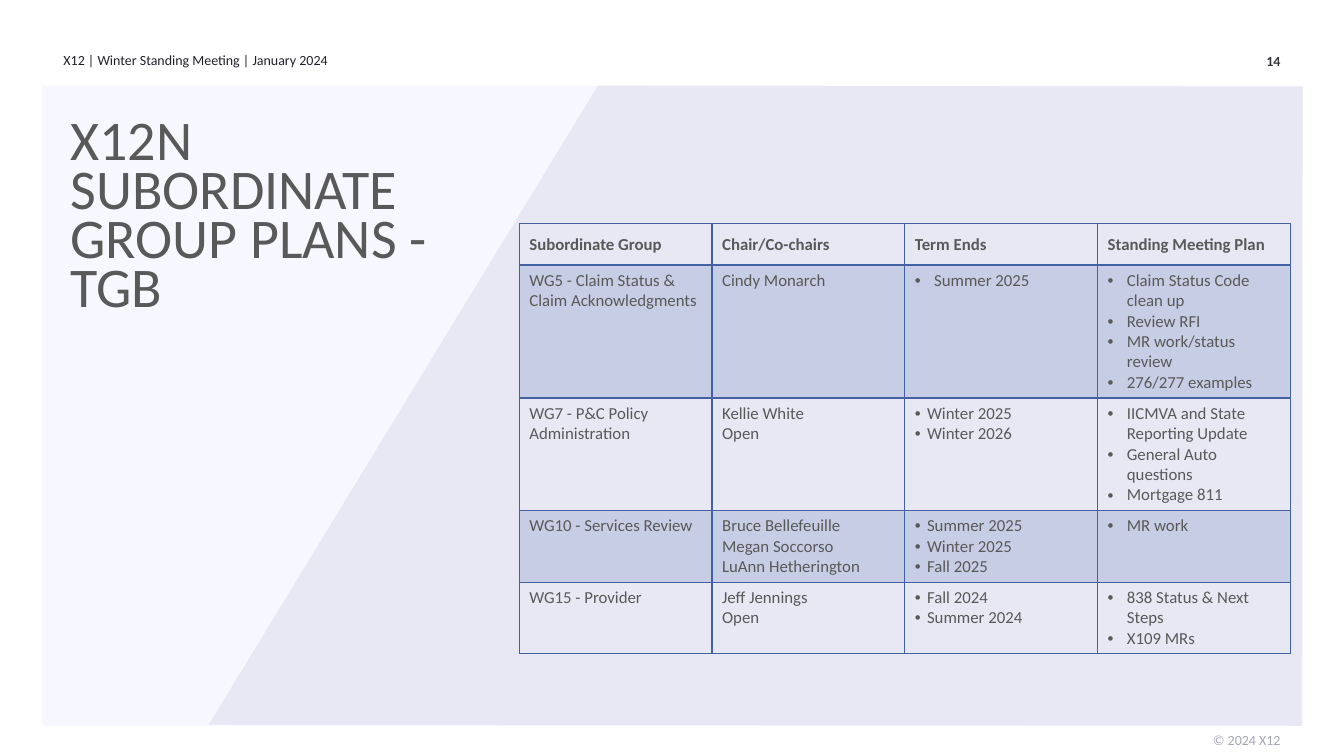
"""Build the X12N subordinate group plans slide."""
import pptx
import pptx.dml.color
import pptx.enum.shapes
import pptx.enum.text
import pptx.oxml
import pptx.oxml.ns
import pptx.util
from pptx.util import Inches

RGBColor = pptx.dml.color.RGBColor
PALE = RGBColor(0xF7, 0xF7, 0xFF)
LAVENDER = RGBColor(0xE8, 0xE8, 0xF5)
BLUE = RGBColor(0x43, 0x61, 0xA3)
GRAY = RGBColor(0x59, 0x59, 0x59)
HEADER_INK = RGBColor(0x21, 0x21, 0x2B)
NUMBER_INK = RGBColor(0x36, 0x36, 0x40)
FOOTER_INK = RGBColor(0xA6, 0xA6, 0xBA)
FONT = "Calibri"
LEFT = pptx.enum.text.PP_ALIGN.LEFT
RIGHT = pptx.enum.text.PP_ALIGN.RIGHT
TOP = pptx.enum.text.MSO_ANCHOR.TOP
MIDDLE = pptx.enum.text.MSO_ANCHOR.MIDDLE

HEADINGS = ["Subordinate Group", "Chair/Co-chairs", "Term Ends", "Standing Meeting Plan"]
GROUPS = [
    (["WG5 - Claim Status & Claim Acknowledgments"], ["Cindy Monarch"], ["Summer 2025"],
     ["Claim Status Code clean up", "Review RFI", "MR work/status review",
      "276/277 examples"]),
    (["WG7 - P&C Policy Administration"], ["Kellie White", "Open"],
     ["Winter 2025", "Winter 2026"],
     ["IICMVA and State Reporting Update", "General Auto questions", "Mortgage 811"]),
    (["WG10 - Services Review"],
     ["Bruce Bellefeuille", "Megan Soccorso", "LuAnn Hetherington"],
     ["Summer 2025", "Winter 2025", "Fall 2025"], ["MR work"]),
    (["WG15 - Provider"], ["Jeff Jennings", "Open"], ["Fall 2024", "Summer 2024"],
     ["838 Status & Next Steps", "X109 MRs"]),
]
ROW_HEIGHT = 0.41
TABLE_WIDTH = 7.65
TERM_COLUMN, PLAN_COLUMN = 2, 3
WIDE_INDENT, NARROW_INDENT = 0.19, 0.12


def style_font(paragraph, size, color, bold=False):
    """Set the font of a whole paragraph."""
    font = paragraph.font
    font.name, font.size, font.bold = FONT, pptx.util.Pt(size), bold
    font.color.rgb = color


def clear_margins(frame):
    """Wrap the text and remove the insets of a text frame."""
    frame.word_wrap = True
    frame.margin_left = frame.margin_right = frame.margin_top = frame.margin_bottom = 0


def fill_panel(shape, color):
    """Give a shape a flat fill without line or shadow."""
    shape.fill.solid()
    shape.fill.fore_color.rgb = color
    shape.line.fill.background()
    shape.shadow.inherit = False


def add_background(slide):
    """Draw the pale panel and the slanted lavender panel on it."""
    panel = slide.shapes.add_shape(
        pptx.enum.shapes.MSO_SHAPE.RECTANGLE,
        Inches(0.42), Inches(0.85), Inches(12.5), Inches(6.35))
    fill_panel(panel, PALE)
    builder = slide.shapes.build_freeform(Inches(2.07), Inches(7.19), scale=1.0)
    corners = [(5.93, 0.85), (12.92, 0.86), (12.91, 7.2)]
    builder.add_line_segments([(Inches(x), Inches(y)) for x, y in corners], close=True)
    fill_panel(builder.convert_to_shape(), LAVENDER)


def add_label(slide, text, left, top, width, color, alignment=RIGHT, bold=False):
    """Add a small one-line label."""
    box = slide.shapes.add_textbox(Inches(left), Inches(top), Inches(width), Inches(0.25))
    clear_margins(box.text_frame)
    paragraph = box.text_frame.paragraphs[0]
    paragraph.text, paragraph.alignment = text, alignment
    style_font(paragraph, 10, color, bold)


def set_title(slide, text):
    """Format the title placeholder and bring it in front of the background."""
    title = slide.shapes.title
    slide.shapes._spTree.append(title._element)
    title.left, title.top = Inches(0.7), Inches(1.22)
    title.width, title.height = Inches(3.69), Inches(1.9)
    frame = title.text_frame
    clear_margins(frame)
    frame.auto_size = pptx.enum.text.MSO_AUTO_SIZE.NONE
    frame.vertical_anchor = TOP
    paragraph = frame.paragraphs[0]
    paragraph.text, paragraph.alignment = text, LEFT
    paragraph.line_spacing = pptx.util.Pt(35)
    style_font(paragraph, 40, GRAY)


def add_bullet(paragraph, indent):
    """Give a paragraph a hanging bullet."""
    properties = paragraph._p.get_or_add_pPr()
    properties.set("marL", str(Inches(indent)))
    properties.set("indent", str(-Inches(indent)))
    for tag, name, value in (("buFont", "typeface", "Arial"), ("buChar", "char", "•")):
        properties.append(pptx.oxml.parse_xml(
            f'<a:{tag} {pptx.oxml.ns.nsdecls("a")} {name}="{value}"/>'))


def set_borders(cell, top, bottom):
    """Draw the four borders of a cell, with widths in points."""
    properties = cell._tc.get_or_add_tcPr()
    for side, width in (("L", 1), ("R", 1), ("T", top), ("B", bottom)):
        properties.append(pptx.oxml.parse_xml(
            f'<a:ln{side} {pptx.oxml.ns.nsdecls("a")} w="{pptx.util.Pt(width)}">'
            f'<a:solidFill><a:srgbClr val="{BLUE}"/></a:solidFill></a:ln{side}>'))


def fill_cell(cell, shaded):
    """Tint a cell with see-through blue or leave it clear."""
    if not shaded:
        cell.fill.background()
        return
    cell.fill.solid()
    cell.fill.fore_color.rgb = BLUE
    color = cell._tc.tcPr.find(pptx.oxml.ns.qn("a:solidFill"))[0]
    color.append(pptx.oxml.parse_xml(f'<a:alpha {pptx.oxml.ns.nsdecls("a")} val="20000"/>'))


def write_cell(cell, lines, indent=0, bold=False):
    """Write one paragraph per line, bulleted when an indent is given."""
    cell.vertical_anchor = MIDDLE if bold else TOP
    frame = cell.text_frame
    frame.text = "\n".join(lines)
    for paragraph in frame.paragraphs:
        if indent:
            add_bullet(paragraph, indent)
        style_font(paragraph, 12, GRAY, bold)


def bullet_indent(row, column):
    """Return the bullet indent for a body cell, zero for plain text."""
    if column == PLAN_COLUMN or (column == TERM_COLUMN and row == 1):
        return WIDE_INDENT
    return NARROW_INDENT if column == TERM_COLUMN else 0


def add_plan_table(slide):
    """Add the table of groups, chairs, terms and plans."""
    rows = [[[heading] for heading in HEADINGS], *GROUPS]
    table = slide.shapes.add_table(
        len(rows), len(HEADINGS), Inches(5.15), Inches(2.22),
        Inches(TABLE_WIDTH), Inches(ROW_HEIGHT * len(rows))).table
    table.first_row = table.horz_banding = False
    for row, contents in enumerate(rows):
        table.rows[row].height = Inches(ROW_HEIGHT)
        heading = row == 0
        for column, lines in enumerate(contents):
            cell = table.cell(row, column)
            indent = 0 if heading else bullet_indent(row, column)
            write_cell(cell, lines, indent, bold=heading)
            set_borders(cell, top=2 if row == 1 else 1, bottom=2 if heading else 1)
            fill_cell(cell, shaded=row % 2 == 1)


def main():
    """Build and save the presentation."""
    presentation = pptx.Presentation()
    presentation.slide_width, presentation.slide_height = Inches(13.33), Inches(7.5)
    slide = presentation.slides.add_slide(presentation.slide_layouts[5])
    add_background(slide)
    add_label(slide, "X12 | Winter Standing Meeting | January 2024",
              0.63, 0.51, 4.5, HEADER_INK, LEFT)
    add_label(slide, "14", 11.19, 0.52, 1.51, NUMBER_INK, bold=True)
    add_label(slide, "© 2024 X12", 11.19, 7.26, 1.51, FOOTER_INK)
    set_title(slide, "X12N SUBORDINATE GROUP PLANS - TGB")
    add_plan_table(slide)
    presentation.save("out.pptx")


if __name__ == "__main__":
    main()
